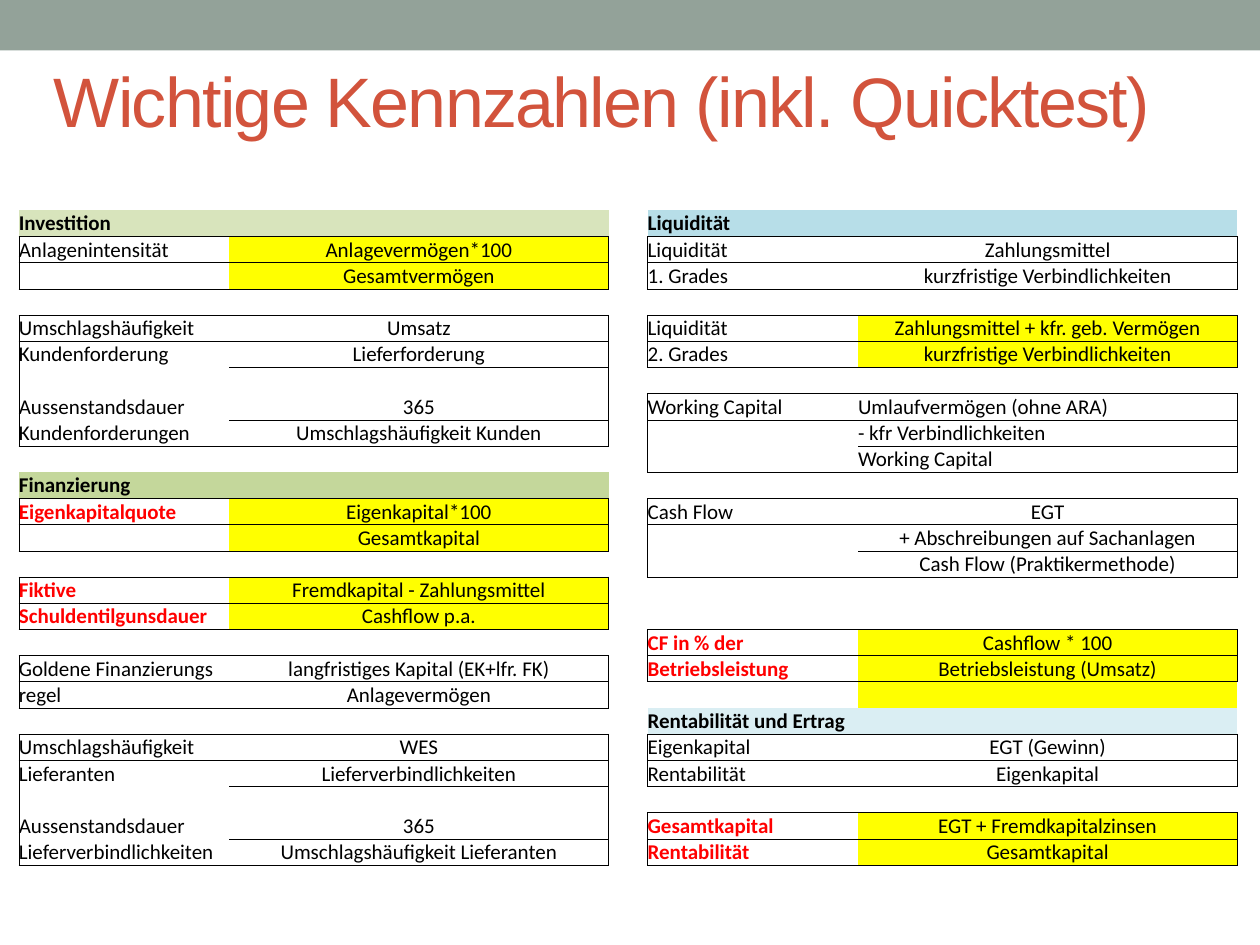
from lxml import etree
from pptx import Presentation
from pptx.dml.color import RGBColor
from pptx.enum.shapes import MSO_SHAPE
from pptx.enum.text import MSO_ANCHOR, PP_ALIGN
from pptx.oxml.ns import qn
from pptx.util import Inches, Pt

LEFT, CENTER = PP_ALIGN.LEFT, PP_ALIGN.CENTER
BOTTOM, MIDDLE = MSO_ANCHOR.BOTTOM, MSO_ANCHOR.MIDDLE
RECT = MSO_SHAPE.RECTANGLE

WIDTH, HEIGHT = 10, 7.5
TOP, TABLE_H = 1.67, 5.2
COLS = (0.78, 0.89, 3.01)
NO_GRID = "{2D5ABB26-0587-4C30-8999-92F81FD0307C}"

COLORS = {
    "bar": "93A299", "title": "D2533C", "black": "000000", "red": "FF0000",
    "white": "FFFFFF", "yellow": "FFFF00", "invest": "D8E4BC",
    "finance": "C4D79B", "liquid": "B7DEE8", "profit": "DAEEF3",
}

BASE = {"label": "white", "value": "white", "ink": "black",
        "bold": False, "align": CENTER, "box": True}
FORMS = {
    "plain": {},
    "list": {"align": LEFT},
    "mark": {"value": "yellow"},
    "key": {"value": "yellow", "ink": "red", "bold": True},
    "gap": {"box": False},
    "bright": {"value": "yellow", "box": False},
}
for name in ("invest", "finance", "liquid", "profit"):
    FORMS[name] = {"label": name, "value": name, "bold": True, "box": False}

NONE = ("", "")
GAP = ("gap", [NONE])

ASSETS = [
    ("invest", [("Investition", "")]),
    ("mark", [("Anlagenintensität", "Anlagevermögen*100"),
              ("", "Gesamtvermögen")]),
    GAP,
    ("plain", [("Umschlagshäufigkeit", "Umsatz"),
               ("Kundenforderung", "Lieferforderung"),
               NONE,
               ("Aussenstandsdauer", "365"),
               ("Kundenforderungen", "Umschlagshäufigkeit Kunden")]),
    GAP,
    ("finance", [("Finanzierung", "")]),
    ("key", [("Eigenkapitalquote", "Eigenkapital*100"),
             ("", "Gesamtkapital")]),
    GAP,
    ("key", [("Fiktive", "Fremdkapital - Zahlungsmittel"),
             ("Schuldentilgunsdauer", "Cashflow p.a.")]),
    GAP,
    ("plain", [("Goldene Finanzierungs", "langfristiges Kapital (EK+lfr. FK)"),
               ("regel", "Anlagevermögen")]),
    GAP,
    ("plain", [("Umschlagshäufigkeit", "WES"),
               ("Lieferanten", "Lieferverbindlichkeiten"),
               NONE,
               ("Aussenstandsdauer", "365"),
               ("Lieferverbindlichkeiten", "Umschlagshäufigkeit Lieferanten")]),
]

CASH = [
    ("liquid", [("Liquidität", "")]),
    ("plain", [("Liquidität", "Zahlungsmittel"),
               ("1. Grades", "kurzfristige Verbindlichkeiten")]),
    GAP,
    ("mark", [("Liquidität", "Zahlungsmittel + kfr. geb. Vermögen"),
              ("2. Grades", "kurzfristige Verbindlichkeiten")]),
    GAP,
    ("list", [("Working Capital", "Umlaufvermögen (ohne ARA)"),
              ("", "- kfr Verbindlichkeiten"),
              ("", "Working Capital")]),
    GAP,
    ("plain", [("Cash Flow", "EGT"),
               ("", "+ Abschreibungen auf Sachanlagen"),
               ("", "Cash Flow (Praktikermethode)")]),
    GAP,
    GAP,
    ("key", [("CF in % der", "Cashflow * 100"),
             ("Betriebsleistung", "Betriebsleistung (Umsatz)")]),
    ("bright", [NONE]),
    ("profit", [("Rentabilität und Ertrag", "")]),
    ("plain", [("Eigenkapital", "EGT (Gewinn)"),
               ("Rentabilität", "Eigenkapital")]),
    GAP,
    ("key", [("Gesamtkapital", "EGT + Fremdkapitalzinsen"),
             ("Rentabilität", "Gesamtkapital")]),
]


def tint(key):
    return RGBColor.from_string(COLORS[key])


def apply(target, values):
    for name, value in values.items():
        setattr(target, name, value)


def write(para, text, size, face, ink, bold=False):
    run = para.add_run()
    run.text = text
    apply(run.font, {"size": Pt(size), "name": face, "bold": bold})
    run.font.color.rgb = tint(ink)
    return run


def add_bar(slide):
    bar = slide.shapes.add_shape(RECT, 0, 0, Inches(WIDTH), Inches(0.4))
    bar.shadow.inherit = False
    bar.fill.solid()
    bar.fill.fore_color.rgb = tint("bar")
    bar.line.fill.background()


def add_title(slide, text):
    box = slide.shapes.add_textbox(
        Inches(0.33), Inches(0.25), Inches(0.9 * WIDTH), Inches(1.08))
    frame = box.text_frame
    apply(frame, {"word_wrap": True, "vertical_anchor": MIDDLE})
    run = write(frame.paragraphs[0], text, 40, "Arial", "title")
    run.font._element.set("spc", "-100")


def draw_edges(cell, sides):
    """Put thin black lines on the given sides, a subset of LRTB."""
    props = cell._tc.get_or_add_tcPr()
    for side in "LRTB":
        if side in sides:
            line = etree.SubElement(props, qn("a:ln" + side), w=str(Pt(0.5)))
            fill = etree.SubElement(line, qn("a:solidFill"))
            etree.SubElement(fill, qn("a:srgbClr"), val=COLORS["black"])


def fill_cell(cell, text, back, ink, bold, align):
    apply(cell, {"vertical_anchor": BOTTOM, "margin_left": 0,
                 "margin_right": 0, "margin_top": 0, "margin_bottom": 0})
    cell.fill.solid()
    cell.fill.fore_color.rgb = tint(back)
    para = cell.text_frame.paragraphs[0]
    para.alignment = align
    if text:
        write(para, text, 12, "Calibri", ink, bold)
    else:
        etree.SubElement(para._p, qn("a:endParaRPr"), sz="1200")


def has_line(rows, i):
    """A fraction line lies above the last value before a blank or the end."""
    values = [value for _, value in rows] + ["", ""]
    return bool(values[i + 1]) and not values[i + 2]


def find_edges(rows, i, col):
    sides = "L" if col == 0 else "R" if col == 2 else ""
    if i == 0 or (col == 2 and has_line(rows, i - 1)):
        sides += "T"
    if i == len(rows) - 1 or (col == 2 and has_line(rows, i)):
        sides += "B"
    return sides


def add_grid(slide, left, blocks):
    count = sum(len(rows) for _, rows in blocks)
    table = slide.shapes.add_table(
        count, len(COLS), Inches(left), Inches(TOP),
        Inches(sum(COLS)), Inches(TABLE_H)).table
    apply(table, {"first_row": False, "horz_banding": False})
    table._tbl.tblPr.find(qn("a:tableStyleId")).text = NO_GRID
    for col, width in zip(table.columns, COLS):
        col.width = Inches(width)
    top = 0
    for kind, rows in blocks:
        form = {**BASE, **FORMS[kind]}
        for i, (label, value) in enumerate(rows):
            cells = [table.cell(top + i, col) for col in range(len(COLS))]
            if label:
                cells[0].merge(cells[1])
            for col, cell in enumerate(cells):
                if form["box"]:
                    draw_edges(cell, find_edges(rows, i, col))
            fill_cell(cells[0], label, form["label"], form["ink"],
                      form["bold"], LEFT)
            fill_cell(cells[1], "", form["label"], "black", False, LEFT)
            fill_cell(cells[2], value, form["value"], "black", False,
                      form["align"])
        top += len(rows)


def main():
    deck = Presentation()
    apply(deck, {"slide_width": Inches(WIDTH), "slide_height": Inches(HEIGHT)})
    slide = deck.slides.add_slide(deck.slide_layouts[6])
    add_bar(slide)
    add_grid(slide, 0.15, ASSETS)
    add_grid(slide, 5.14, CASH)
    add_title(slide, "Wichtige Kennzahlen (inkl. Quicktest)")
    deck.save("out.pptx")


if __name__ == "__main__":
    main()
